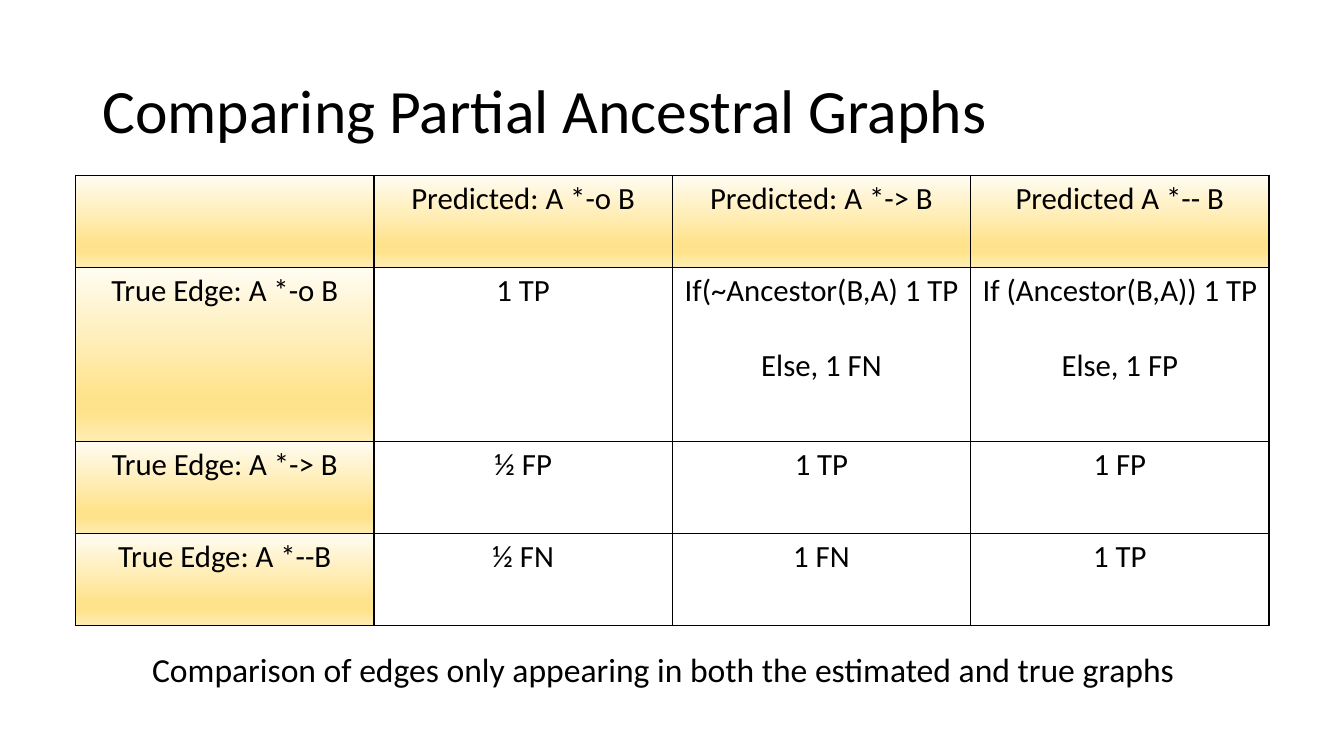
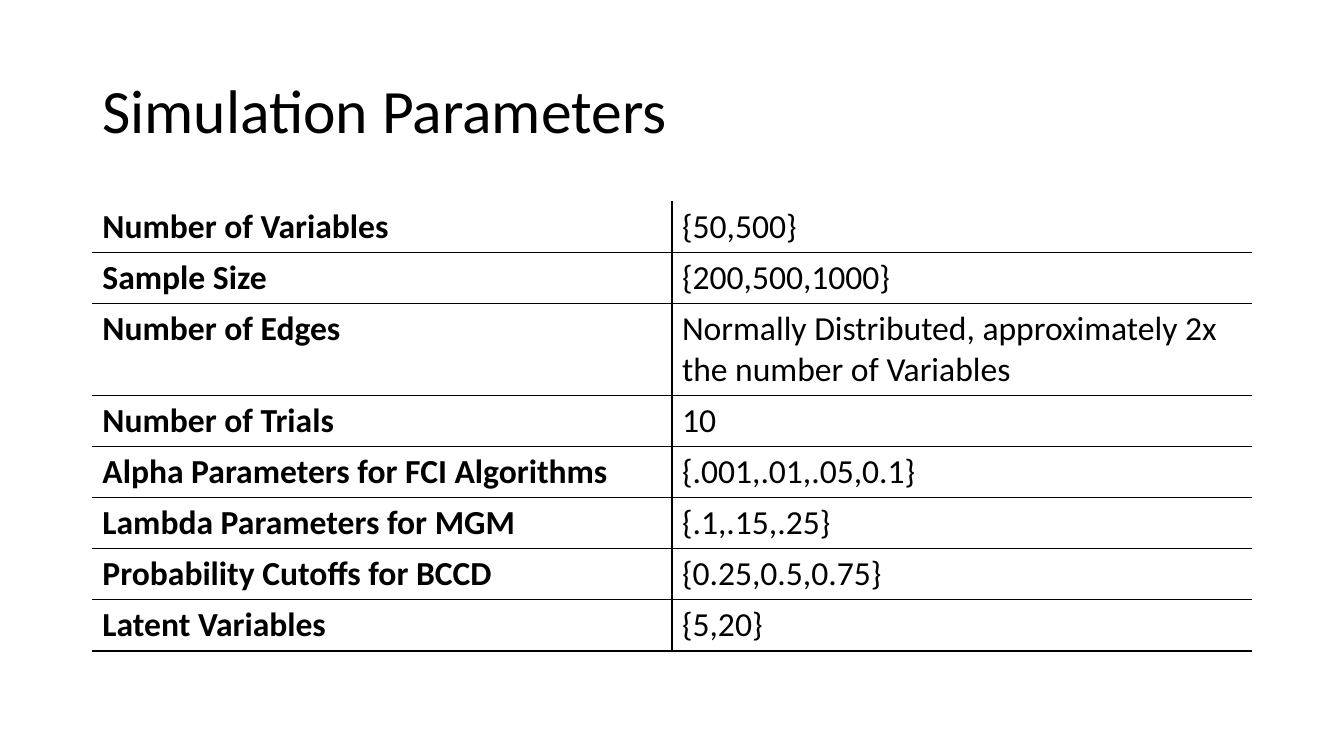
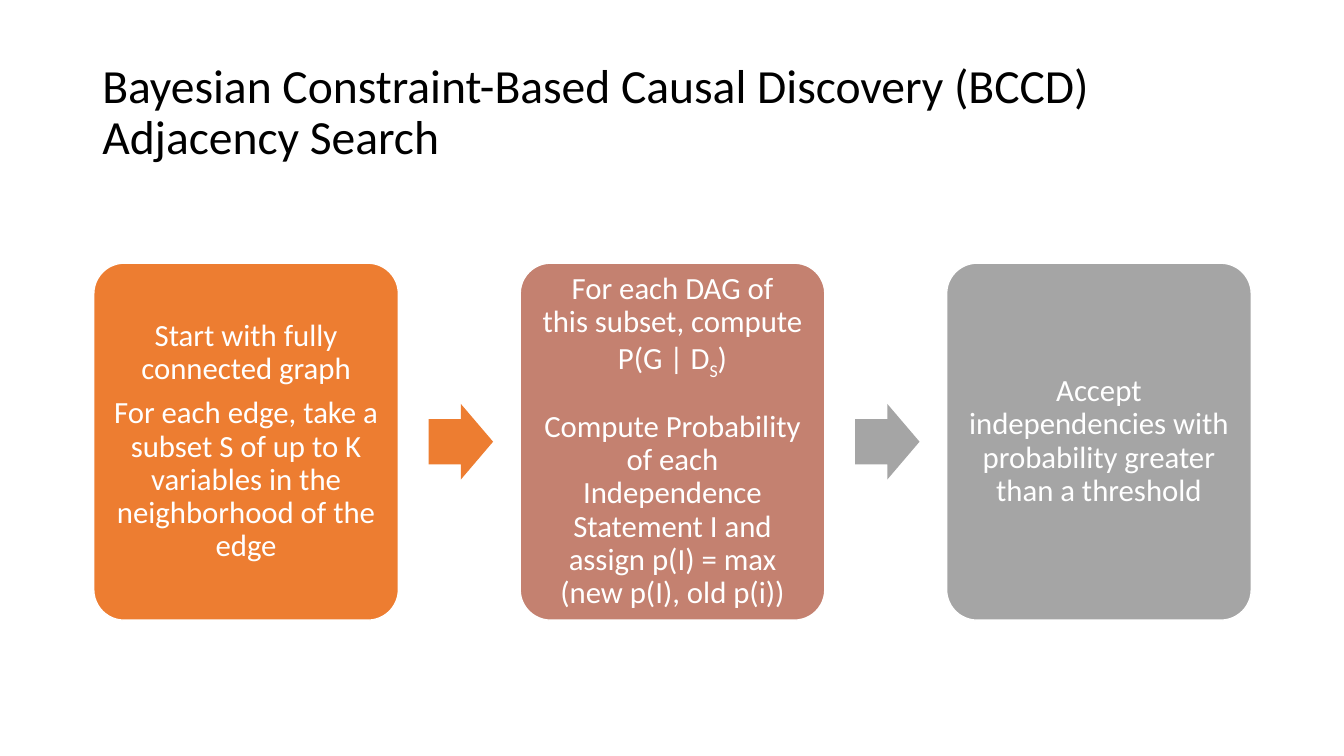
from dataclasses import dataclass

from lxml import etree
from pptx import Presentation
from pptx.dml.color import RGBColor
from pptx.enum import shapes, text
from pptx.oxml import ns
from pptx.util import Pt


@dataclass(frozen=True)
class Theme:
    font: str = "Calibri"
    ink: str = "000000"
    white: str = "FFFFFF"
    orange: str = "ED7D31"
    clay: str = "C48170"
    gray: str = "A5A5A5"
    gold: tuple = ((0, "FFFCF2"), (74, "FFE38C"), (83, "FFE38C"), (100, "FFECB2"))
    title: int = 44
    long_title: int = 34
    body: int = 24
    small: int = 22
    rule: int = 1


T = Theme()
LEFT, CENTER = text.PP_ALIGN.LEFT, text.PP_ALIGN.CENTER


def rgb(value):
    return RGBColor.from_string(value)


def write(tf, content, size=T.body, color=T.ink, bold=False, align=LEFT,
          spacing=1.0, after=()):
    """Fill a frame; odd parts of a tuple paragraph are subscripts."""
    paragraphs = content if isinstance(content, list) else [content]
    for i, parts in enumerate(paragraphs):
        p = tf.paragraphs[0] if i == 0 else tf.add_paragraph()
        p.alignment = align
        p.line_spacing = spacing
        if i < len(after):
            p.space_after = Pt(after[i])
        for j, part in enumerate((parts,) if isinstance(parts, str) else parts):
            for k, line in enumerate(part.split("\n")):
                if k:
                    p.add_line_break()
                r = p.add_run()
                r.text = line
                r.font.name = T.font
                r.font.size = Pt(size)
                r.font.bold = bold
                r.font.color.rgb = rgb(color)
                if j % 2:
                    r.font._element.set("baseline", "-25000")


def add_textbox(s, left, top, width, height, content,
                anchor=text.MSO_ANCHOR.TOP, **fmt):
    tf = s.shapes.add_textbox(Pt(left), Pt(top), Pt(width), Pt(height)).text_frame
    tf.word_wrap = True
    tf.vertical_anchor = anchor
    write(tf, content, **fmt)


def add_slide(prs, title, size=T.title):
    s = prs.slides.add_slide(prs.slide_layouts[6])
    add_textbox(s, 66, 28.8, 828, 104.4, title, text.MSO_ANCHOR.MIDDLE,
                size=size, spacing=0.9)
    return s


def add_shape(s, kind, left, top, width, height, color, adjustments, line=None):
    sp = s.shapes.add_shape(kind, Pt(left), Pt(top), Pt(width), Pt(height))
    sp.shadow.inherit = False
    for i, value in enumerate(adjustments):
        sp.adjustments[i] = value
    sp.fill.solid()
    sp.fill.fore_color.rgb = rgb(color)
    if line:
        sp.line.color.rgb = rgb(line)
        sp.line.width = Pt(T.rule)
    else:
        sp.line.fill.background()
    return sp


def add_xml(parent, tag, **attrs):
    return etree.SubElement(parent, ns.qn(tag),
                            {name: str(value) for name, value in attrs.items()})


def set_borders(cell, sides):
    tc_pr = cell._tc.get_or_add_tcPr()
    for side in "LRTB":
        ln = add_xml(tc_pr, f"a:ln{side}", w=int(Pt(T.rule)))
        if side in sides:
            add_xml(add_xml(ln, "a:solidFill"), "a:srgbClr", val=T.ink)
        else:
            add_xml(ln, "a:noFill")


def set_gold_fill(cell):
    grad = add_xml(cell._tc.get_or_add_tcPr(), "a:gradFill", rotWithShape=1)
    stops = add_xml(grad, "a:gsLst")
    for position, color in T.gold:
        add_xml(add_xml(stops, "a:gs", pos=position * 1000), "a:srgbClr", val=color)
    add_xml(grad, "a:lin", ang=5400000, scaled=0)


def add_table(s, left, top, width, heights, rows, style_cell):
    count = len(rows[0])
    table = s.shapes.add_table(len(rows), count, Pt(left), Pt(top), Pt(width),
                               Pt(sum(heights))).table
    table.first_row = table.horz_banding = False
    for column in table.columns:
        column.width = Pt(width / count)
    for i, row in enumerate(rows):
        table.rows[i].height = Pt(heights[i])
        for j, content in enumerate(row):
            style_cell(table.cell(i, j), i, j, content)


def style_score(cell, i, j, content):
    set_borders(cell, "LRTB")
    if i == 0 or j == 0:
        set_gold_fill(cell)
    else:
        cell.fill.background()
    if content:
        write(cell.text_frame, content, size=T.small, align=CENTER, after=(27,))


def style_parameter(cell, i, j, content):
    set_borders(cell, ("L" if j else "R") + ("TB" if i else "B"))
    cell.fill.background()
    write(cell.text_frame, content, bold=j == 0)


def add_steps(s, steps):
    left, top, width, height, pitch = 67, 188, 217.6, 255, 304.6
    arrow_w, arrow_h, gap = 46, 54, 21.6
    for i, (color, content, after) in enumerate(steps):
        x = left + i * pitch
        if i:
            add_shape(s, shapes.MSO_SHAPE.RIGHT_ARROW, x - pitch + width + gap,
                      top + (height - arrow_h) / 2, arrow_w, arrow_h,
                      T.orange if i == 1 else color, (0.6, 0.5))
        sp = add_shape(s, shapes.MSO_SHAPE.ROUNDED_RECTANGLE, x, top, width,
                       height, color, (0.1,), T.white)
        tf = sp.text_frame
        tf.word_wrap = True
        tf.vertical_anchor = text.MSO_ANCHOR.MIDDLE
        tf.margin_left = tf.margin_right = Pt(6.5)
        tf.margin_top = tf.margin_bottom = 0
        write(tf, content, size=T.small, color=T.white, align=CENTER,
              spacing=0.9, after=after)


def main():
    prs = Presentation()
    prs.slide_width, prs.slide_height = Pt(960), Pt(540)

    s = add_slide(prs, "Comparing Partial Ancestral Graphs")
    add_textbox(s, 101.5, 460, 757, 36,
                "Comparison of edges only appearing in both the estimated and true graphs")
    add_table(s, 54, 125.3, 852.5, [65.7, 124.4, 65.7, 65.7], [
        ["", "Predicted: A *-o B", "Predicted: A *-> B", "Predicted A *-- B"],
        ["True Edge: A *-o B", "1 TP",
         ["If(~Ancestor(B,A) 1 TP", "Else, 1 FN"],
         ["If (Ancestor(B,A)) 1 TP", "Else, 1 FP"]],
        ["True Edge: A *-> B", "½ FP", "1 TP", "1 FP"],
        ["True Edge: A *--B", "½ FN", "1 FN", "1 TP"],
    ], style_score)

    s = add_slide(prs, "Simulation Parameters")
    add_table(s, 66, 143.8, 828, [36.5] * 2 + [65.8] + [36.5] * 5, [
        ["Number of Variables", "{50,500}"],
        ["Sample Size", "{200,500,1000}"],
        ["Number of Edges",
         "Normally Distributed, approximately 2x the number of Variables"],
        ["Number of Trials", "10"],
        ["Alpha Parameters for FCI Algorithms", "{.001,.01,.05,0.1}"],
        ["Lambda Parameters for MGM", "{.1,.15,.25}"],
        ["Probability Cutoffs for BCCD", "{0.25,0.5,0.75}"],
        ["Latent Variables", "{5,20}"],
    ], style_parameter)

    s = add_slide(prs, "Bayesian Constraint-Based Causal Discovery (BCCD) "
                       "Adjacency Search", T.long_title)
    add_steps(s, [
        (T.orange, ["Start with fully connected graph",
                    "For each edge, take a subset S of up to K variables in the "
                    "neighborhood of the edge"], (7.7,)),
        (T.clay, [("For each DAG of\nthis subset, compute\nP(G | D", "S", ")"),
                  "Compute Probability of each Independence Statement I and "
                  "assign p(I) = max (new p(I), old p(i))"], (24,)),
        (T.gray, "Accept independencies with probability greater than a threshold",
         ()),
    ])

    prs.save("out.pptx")


if __name__ == "__main__":
    main()
